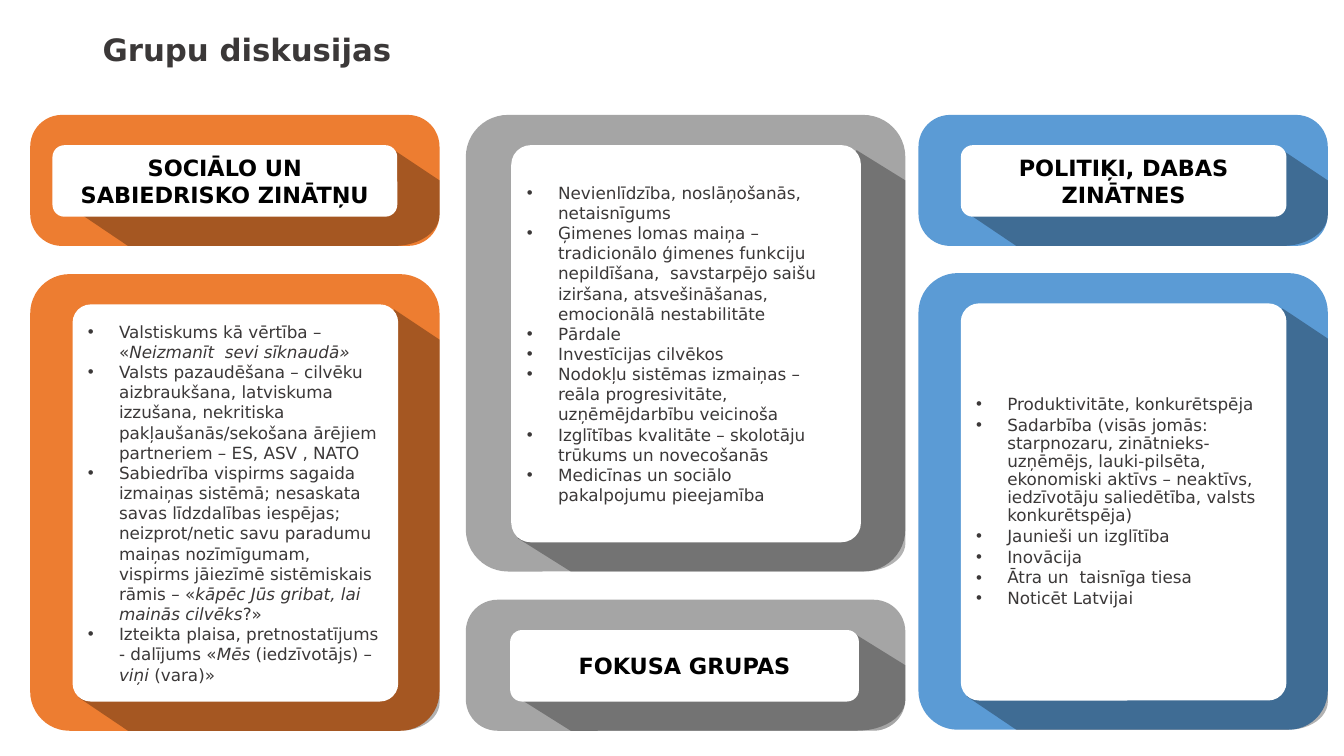
import pptx
import pptx.util
import pptx.dml.color
import pptx.enum.shapes
import pptx.enum.text
import pptx.oxml
import pptx.oxml.ns
from lxml import etree

Inches = pptx.util.Inches
Pt = pptx.util.Pt
RGB = pptx.dml.color.RGBColor.from_string
ROUND = pptx.enum.shapes.MSO_SHAPE.ROUNDED_RECTANGLE
ANCHOR = pptx.enum.text.MSO_ANCHOR
ALIGN = pptx.enum.text.PP_ALIGN
qn = pptx.oxml.ns.qn

COLORS = {"orange": "ED7D31", "gray": "A5A5A5", "blue": "5B9BD5",
          "white": "FFFFFF", "black": "000000", "text": "3B3838"}
FONT = "DejaVu Sans"
HEAD_H, BODY_H = 1.3, 4.53
BASE_W = 4.06

# Asterisks enclose italic wording.
COLUMNS = [
    {"color": "orange", "x": 0.3, "w": 4.06, "head_y": 1.14, "body_y": 2.72,
     "head": "SOCIĀLO UN SABIEDRISKO ZINĀTŅU", "head_face": (0.52, 3.42), "tight": False,
     "items": [
         "Valstiskums kā vērtība – «*Neizmanīt  sevi sīknaudā»*",
         "Valsts pazaudēšana – cilvēku aizbraukšana, latviskuma izzušana, nekritiska "
         "pakļaušanās/sekošana ārējiem partneriem – ES, ASV , NATO",
         "Sabiedrība vispirms sagaida izmaiņas sistēmā; nesaskata savas līdzdalības iespējas; "
         "neizprot/netic savu paradumu maiņas nozīmīgumam, vispirms jāiezīmē sistēmiskais "
         "rāmis – «*kāpēc Jūs gribat, lai mainās cilvēks*?»",
         "Izteikta plaisa, pretnostatījums - dalījums «*Mēs* (iedzīvotājs) – *viņi* (vara)»"]},
    {"color": "blue", "x": 9.11, "w": 4.06, "head_y": 1.14, "body_y": 2.71,
     "head": "POLITIĶI, DABAS ZINĀTNES", "head_face": (9.53, 3.23), "tight": True,
     "items": [
         "Produktivitāte, konkurētspēja",
         "Sadarbība (visās jomās: starpnozaru, zinātnieks-uzņēmējs, lauki-pilsēta, ekonomiski "
         "aktīvs – neaktīvs, iedzīvotāju saliedētība, valsts konkurētspēja)",
         "Jaunieši un izglītība",
         "Inovācija",
         "Ātra un  taisnīga tiesa",
         "Noticēt Latvijai"]},
    {"color": "gray", "x": 4.62, "w": 4.36, "head_y": 5.95, "body_y": 1.14,
     "head": "FOKUSA GRUPAS", "head_face": (5.06, 3.46), "tight": False,
     "items": [
         "Nevienlīdzība, noslāņošanās, netaisnīgums",
         "Ģimenes lomas maiņa – tradicionālo ģimenes funkciju nepildīšana,  savstarpējo saišu "
         "iziršana, atsvešināšanas, emocionālā nestabilitāte",
         "Pārdale",
         "Investīcijas cilvēkos",
         "Nodokļu sistēmas izmaiņas – reāla progresivitāte, uzņēmējdarbību veicinoša",
         "Izglītības kvalitāte – skolotāju trūkums un novecošanās",
         "Medicīnas un sociālo pakalpojumu pieejamība"]},
]


def add_run(p, text, size, color, bold=False, italic=False):
    r = p.add_run()
    r.text = text
    r.font.name = FONT
    r.font.size = Pt(size)
    r.font.bold = bold
    r.font.italic = italic
    r.font.color.rgb = RGB(COLORS[color])


def add_panel(shapes, color, x, y, w, h, face):
    """Add a coloured panel with a long shadow; return its white face's text frame."""
    tall = h > 2
    face_x, face_w = face
    boxes = [(x, y, w, h, color, 0.096 if tall else 0.242),
             (face_x, y + 0.3, face_w, h - 0.59, "white", 0.056 if tall else 0.167)]
    for i, (bx, by, bw, bh, fill, adj) in enumerate(boxes):
        sp = shapes.add_shape(ROUND, Inches(bx), Inches(by), Inches(bw), Inches(bh))
        sp.adjustments[0] = adj
        sp.shadow.inherit = False
        sp.fill.solid()
        sp.fill.fore_color.rgb = RGB(COLORS[fill])
        sp.line.fill.background()
        if i == 1:
            break

        k = w / BASE_W
        right, bottom = x + w, y + h
        rx, ry = (0.39 * k, 0.28) if tall else (0.45 * k, 0.31)
        corner = [(right, bottom - ry), (right, bottom - ry * 0.45),
                  (right - rx * 0.45, bottom), (right - rx, bottom)]
        points = [(right - 0.45 * k, y + 0.35), (right, y + 0.65)]
        for step in range(13):
            t = step / 12
            weights = ((1 - t) ** 3, 3 * t * (1 - t) ** 2, 3 * t * t * (1 - t), t ** 3)
            points.append(tuple(sum(c * pt[axis] for c, pt in zip(weights, corner))
                                for axis in (0, 1)))
        points += [(x + 0.97 * k, bottom), (x + 0.48 * k, bottom - 0.33)]
        points = [(Inches(px), Inches(py)) for px, py in points]
        builder = shapes.build_freeform(*points[0])
        builder.add_line_segments(points[1:], close=True)
        shade = builder.convert_to_shape()
        shade.shadow.inherit = False
        shade.fill.solid()
        shade.fill.fore_color.rgb = RGB(COLORS["black"])
        rgb = shade.fill._xPr.find(".//" + qn("a:srgbClr"))
        etree.SubElement(rgb, qn("a:alpha")).set("val", "30000")
        shade.line.fill.background()

    tf = sp.text_frame
    tf.word_wrap = True
    tf.vertical_anchor = ANCHOR.MIDDLE
    return tf


prs = pptx.Presentation()
prs.slide_width = Inches(13.33)
prs.slide_height = Inches(7.5)
s = prs.slides.add_slide(prs.slide_layouts[6])

for col in COLUMNS:
    shapes = s.shapes.add_group_shape().shapes
    x, w = col["x"], col["w"]

    tf = add_panel(shapes, col["color"], x, col["head_y"], w, HEAD_H, col["head_face"])
    p = tf.paragraphs[0]
    p.alignment = ALIGN.CENTER
    add_run(p, col["head"], 16, "black", bold=True)

    k = w / BASE_W
    body_face = (x + 0.42 * k, 3.23 * k)
    tf = add_panel(shapes, col["color"], x, col["body_y"], w, BODY_H, body_face)
    for i, item in enumerate(col["items"]):
        p = tf.add_paragraph() if i else tf.paragraphs[0]
        p.alignment = ALIGN.LEFT
        if col["tight"]:
            p.line_spacing = 0.9
            p.space_after = Pt(1.8)
        pPr = p._p.get_or_add_pPr()
        pPr.set("marL", str(Inches(0.31)))
        pPr.set("indent", str(-Inches(0.31)))
        etree.SubElement(pPr, qn("a:buFont")).set("typeface", "Arial")
        etree.SubElement(pPr, qn("a:buChar")).set("char", "•")
        for j, part in enumerate(item.split("*")):
            if part:
                add_run(p, part, 12, "text", italic=j % 2 == 1)

title = s.shapes.add_textbox(Inches(0.92), Inches(0.3), Inches(11.5), Inches(0.93))
tf = title.text_frame
tf.word_wrap = True
p = tf.paragraphs[0]
p.line_spacing = 0.9
add_run(p, "Grupu diskusijas", 22, "text", bold=True)

prs.save("out.pptx")
